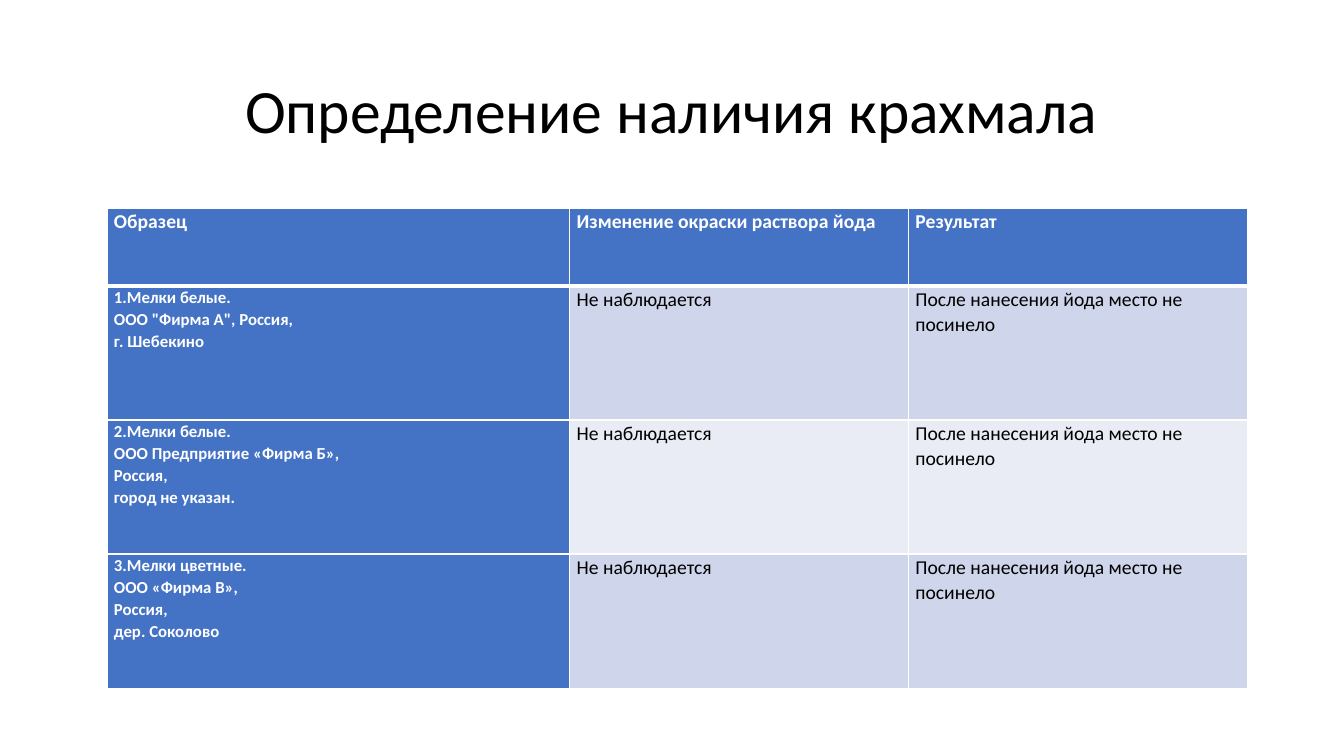
from lxml.etree import SubElement
from pptx import Presentation
from pptx.dml.color import RGBColor
from pptx.enum.text import MSO_ANCHOR, PP_ALIGN
from pptx.oxml.ns import qn
from pptx.util import Pt

# Content
TITLE = "Определение наличия крахмала"
HEADER = ["Образец", "Изменение окраски раствора йода", "Результат"]
OBSERVATION = "Не наблюдается"
RESULT = "После нанесения йода место не посинело"
SAMPLES = [
    "1.Мелки белые.\nООО \"Фирма А\", Россия,\nг. Шебекино",
    "2.Мелки белые.\nООО Предприятие «Фирма Б»,\nРоссия,\nгород не указан.",
    "3.Мелки цветные.\nООО «Фирма В»,\nРоссия,\nдер. Соколово",
]
ROWS = [HEADER] + [[sample, OBSERVATION, RESULT] for sample in SAMPLES]

# Style
FONT = "Calibri"
BLACK = RGBColor(0x00, 0x00, 0x00)
WHITE = RGBColor(0xFF, 0xFF, 0xFF)
BLUE = RGBColor(0x44, 0x72, 0xC4)
BANDS = [RGBColor(0xCF, 0xD5, 0xEA), RGBColor(0xE9, 0xEB, 0xF5)]
TABLE_LEFT, TABLE_TOP = 76.5, 149
COLUMN_WIDTHS = [330.5, 242, 242]
ROW_HEIGHTS = [55.2] + [95.8] * len(SAMPLES)
THIN, THICK = 1, 3


def set_font(paragraph, size, color, bold=False):
    paragraph.font.name = FONT
    paragraph.font.size = Pt(size)
    paragraph.font.color.rgb = color
    paragraph.font.bold = bold


def set_borders(cell, top, bottom):
    properties = cell._tc.get_or_add_tcPr()
    for side, width in (("L", THIN), ("R", THIN), ("T", top), ("B", bottom)):
        line = SubElement(properties, qn(f"a:ln{side}"), w=str(Pt(width)))
        fill = SubElement(line, qn("a:solidFill"))
        SubElement(fill, qn("a:srgbClr"), val=str(WHITE))


presentation = Presentation()
presentation.slide_width, presentation.slide_height = Pt(960), Pt(540)
slide = presentation.slides.add_slide(presentation.slide_layouts[5])

# Title
title = slide.shapes.title
title.left, title.top, title.width, title.height = Pt(66), Pt(28.8), Pt(828), Pt(104.4)
title.text_frame.text = TITLE
title.text_frame.vertical_anchor = MSO_ANCHOR.MIDDLE
heading = title.text_frame.paragraphs[0]
heading.alignment = PP_ALIGN.CENTER
heading.line_spacing = 0.9
set_font(heading, 44, BLACK)

# Table grid
table = slide.shapes.add_table(
    len(ROWS), len(HEADER), Pt(TABLE_LEFT), Pt(TABLE_TOP),
    Pt(sum(COLUMN_WIDTHS)), Pt(sum(ROW_HEIGHTS))).table
table.first_col = True
for column, width in zip(table.columns, COLUMN_WIDTHS):
    column.width = Pt(width)
for row, height in zip(table.rows, ROW_HEIGHTS):
    row.height = Pt(height)

# Table cells
for row_index, texts in enumerate(ROWS):
    for column_index, text in enumerate(texts):
        cell = table.cell(row_index, column_index)
        is_header = row_index == 0
        emphasized = is_header or column_index == 0
        set_borders(cell, top=THICK if row_index == 1 else THIN,
                    bottom=THICK if is_header else THIN)
        cell.fill.solid()
        cell.fill.fore_color.rgb = BLUE if emphasized else BANDS[(row_index - 1) % 2]
        cell.margin_left = cell.margin_right = Pt(4.9)
        cell.margin_top = cell.margin_bottom = 0
        cell.text = text
        for paragraph in cell.text_frame.paragraphs:
            paragraph.line_spacing = 1.07
            set_font(paragraph, 12 if emphasized and not is_header else 14,
                     WHITE if emphasized else BLACK, emphasized)

presentation.save("out.pptx")
